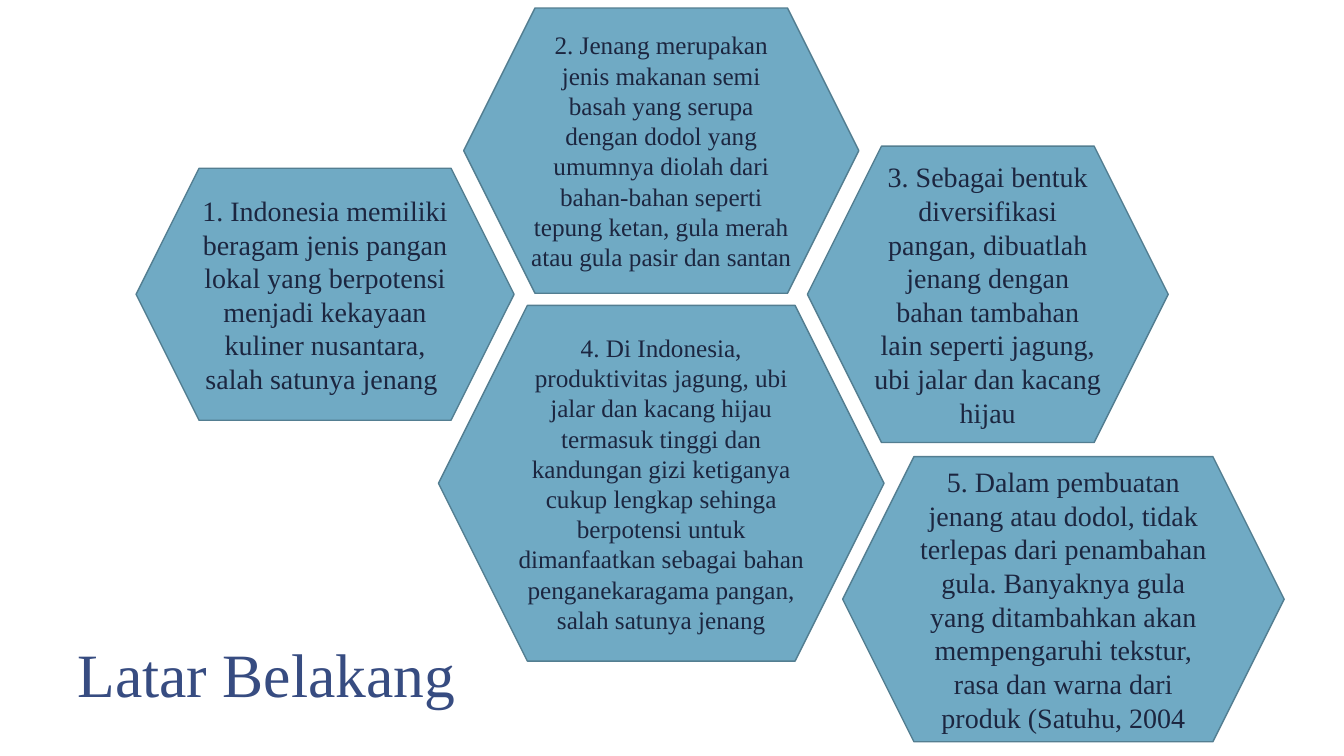
from dataclasses import dataclass

from pptx import Presentation
from pptx.dml.color import RGBColor
from pptx.enum.shapes import MSO_SHAPE as Preset
from pptx.enum.text import MSO_ANCHOR as Anchor, PP_ALIGN as Align
from pptx.util import Pt


@dataclass(frozen=True)
class Theme:
    font: str = "Times New Roman"
    background: str = "FFFFFF"
    title_color: str = "374C81"
    text_color: str = "1C2640"
    hexagon_fill: str = "70AAC4"
    hexagon_line: str = "537E91"
    title_size: int = 44
    large_size: int = 20
    small_size: int = 18


THEME = Theme()

REASONS = [
    ((97.2, 120.24, 270, 180), THEME.large_size,
     "1. Indonesia memiliki beragam jenis pangan lokal yang berpotensi "
     "menjadi kekayaan kuliner nusantara, salah satunya jenang "),
    ((331.2, 5.76, 282.24, 203.76), THEME.small_size,
     "2. Jenang merupakan jenis makanan semi basah yang serupa dengan dodol "
     "yang umumnya diolah dari bahan-bahan seperti tepung ketan, gula merah "
     "atau gula pasir dan santan"),
    ((576.72, 104.4, 257.76, 211.68), THEME.large_size,
     "3. Sebagai bentuk diversifikasi pangan, dibuatlah jenang dengan bahan "
     "tambahan lain seperti jagung, ubi jalar dan kacang hijau"),
    ((313.2, 218.16, 318.24, 254.16), THEME.small_size,
     "4. Di Indonesia, produktivitas jagung, ubi jalar dan kacang hijau "
     "termasuk tinggi dan kandungan gizi ketiganya cukup lengkap sehinga "
     "berpotensi untuk dimanfaatkan sebagai bahan penganekaragama pangan, "
     "salah satunya jenang"),
    ((601.92, 326.16, 315.36, 203.76), THEME.large_size,
     "5. Dalam pembuatan jenang atau dodol, tidak terlepas dari penambahan "
     "gula. Banyaknya gula yang ditambahkan akan mempengaruhi tekstur, rasa "
     "dan warna dari produk (Satuhu, 2004"),
]


def color(value):
    return RGBColor.from_string(value)


def write_text(shape, text, *, size, text_color, align, anchor, spacing=1.0):
    frame = shape.text_frame
    frame.word_wrap = True
    frame.vertical_anchor = anchor
    paragraph = frame.paragraphs[0]
    paragraph.alignment = align
    paragraph.line_spacing = spacing
    run = paragraph.add_run()
    run.text = text
    run.font.name = THEME.font
    run.font.size = Pt(size)
    run.font.color.rgb = color(text_color)


def add_title(slide, box, text):
    shape = slide.shapes.add_textbox(*map(Pt, box))
    frame = shape.text_frame
    frame.margin_left = frame.margin_right = Pt(9.36)
    frame.margin_top = frame.margin_bottom = Pt(5.04)
    write_text(shape, text, size=THEME.title_size, text_color=THEME.title_color,
               align=Align.LEFT, anchor=Anchor.BOTTOM, spacing=0.85)


def add_reason(slide, box, size, text):
    shape = slide.shapes.add_shape(Preset.HEXAGON, *map(Pt, box))
    shape.shadow.inherit = False
    shape.fill.solid()
    shape.fill.fore_color.rgb = color(THEME.hexagon_fill)
    shape.line.color.rgb = color(THEME.hexagon_line)
    shape.line.width = Pt(1)
    write_text(shape, text, size=size, text_color=THEME.text_color,
               align=Align.CENTER, anchor=Anchor.MIDDLE)


def main():
    presentation = Presentation()
    presentation.slide_width = Pt(960)
    presentation.slide_height = Pt(540)
    slide = presentation.slides.add_slide(presentation.slide_layouts[6])
    slide.background.fill.solid()
    slide.background.fill.fore_color.rgb = color(THEME.background)
    add_title(slide, (46.08, 426.24, 799.92, 85.68), "Latar Belakang")
    for box, size, text in REASONS:
        add_reason(slide, box, size, text)
    presentation.save("out.pptx")


if __name__ == "__main__":
    main()
